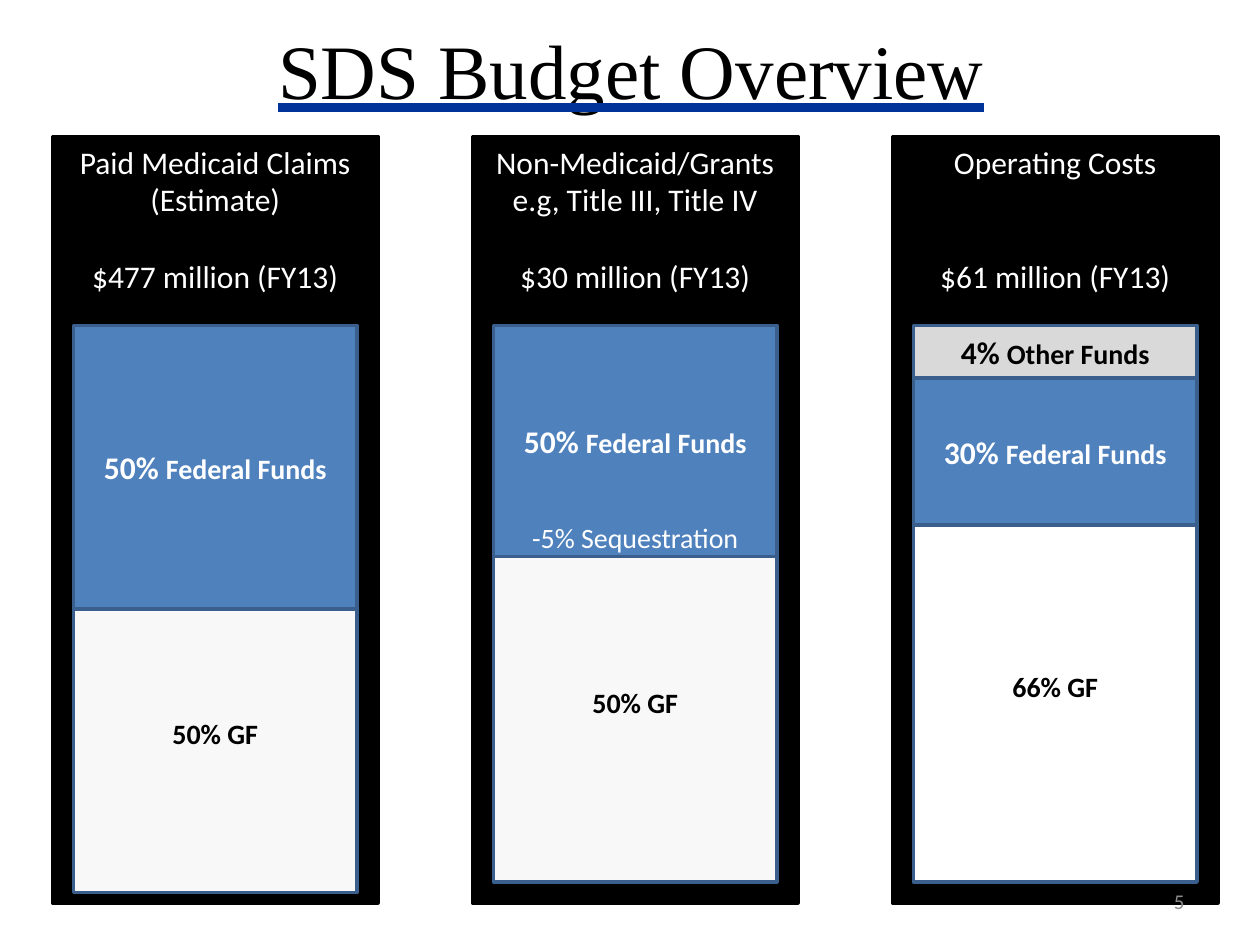
from lxml.etree import SubElement
from pptx import Presentation
from pptx.dml.color import RGBColor
from pptx.enum.shapes import MSO_SHAPE as Shape
from pptx.enum.text import MSO_ANCHOR as Anchor, MSO_UNDERLINE as Underline, PP_ALIGN as Align
from pptx.oxml.ns import qn
from pptx.util import Pt

BLACK, WHITE, GRAY = "000000", "FFFFFF", "D9D9D9"
BLUE, PALE, OUTLINE = "4F81BD", "F8F8F8", "3A5F8C"
COLUMN_LEFT, COLUMN_STEP, COLUMN_WIDTH = 30, 240, 186
COLUMN_TOP, COLUMN_HEIGHT = 78, 438
BAR_INSET, BAR_TOP = 12, 186
HEADER_LINE = 22

# Header lines, blank lines before the amount, amount, and
# (percentage, source, height, fill) for each segment from the top
COLUMNS = [
    (["Paid Medicaid Claims (Estimate)"], 1, "$477 million (FY13)",
     [("50%", "Federal Funds", 162, BLUE), ("50%", "GF", 162, PALE)]),
    (["Non-Medicaid/Grants", "e.g, Title III, Title IV"], 1, "$30 million (FY13)",
     [("50%", "Federal Funds", 132, BLUE), ("50%", "GF", 186, PALE)]),
    (["Operating Costs"], 2, "$61 million (FY13)",
     [("4%", "Other Funds", 30, GRAY), ("30%", "Federal Funds", 84, BLUE),
      ("66%", "GF", 204, WHITE)]),
]


def rgb(value):
    return RGBColor.from_string(value)


def set_font(font, size, color, bold=False, name="Calibri"):
    font.name, font.size, font.bold = name, Pt(size), bold
    font.color.rgb = rgb(color)


def add_title(slide, text):
    title = slide.shapes.title
    title.left, title.top, title.width, title.height = Pt(18), Pt(0), Pt(685.5), Pt(78)
    title.text_frame.vertical_anchor = Anchor.MIDDLE
    paragraph = title.text_frame.paragraphs[0]
    paragraph.alignment = Align.CENTER
    run = paragraph.add_run()
    run.text = text
    set_font(run.font, 44, BLACK, name="Times New Roman")
    run.font.underline = Underline.HEAVY_LINE
    # Blue underline, placed before the typeface as the schema requires
    properties = run.font._element
    underline_fill = SubElement(properties, qn("a:uFill"))
    solid_fill = SubElement(underline_fill, qn("a:solidFill"))
    SubElement(solid_fill, qn("a:srgbClr"), val="003399")
    properties.find(qn("a:latin")).addprevious(underline_fill)


def add_box(slide, left, top, width, height, fill, line):
    box = slide.shapes.add_shape(Shape.RECTANGLE, Pt(left), Pt(top), Pt(width), Pt(height))
    box.shadow.inherit = False
    box.fill.solid()
    box.fill.fore_color.rgb = rgb(fill)
    box.line.color.rgb = rgb(line)
    box.line.width = Pt(2)
    box.text_frame.word_wrap = True
    return box


def add_header(slide, left, lines, blank_lines, amount):
    box = add_box(slide, left, COLUMN_TOP, COLUMN_WIDTH, COLUMN_HEIGHT, BLACK, BLACK)
    frame = box.text_frame
    frame.vertical_anchor = Anchor.TOP
    frame.text = "\n".join(lines + [amount])
    for paragraph in frame.paragraphs:
        paragraph.alignment = Align.CENTER
        set_font(paragraph.font, 18, WHITE)
    frame.paragraphs[-1].space_before = Pt(blank_lines * HEADER_LINE)


def add_segment(slide, left, top, percentage, source, height, fill):
    box = add_box(slide, left, top, COLUMN_WIDTH - 2 * BAR_INSET, height, fill, OUTLINE)
    frame = box.text_frame
    frame.vertical_anchor = Anchor.MIDDLE
    paragraph = frame.paragraphs[0]
    paragraph.alignment = Align.CENTER
    general_fund = source == "GF"
    if general_fund:
        frame.margin_bottom = Pt(23)  # lifts the label above the middle
    percentage_size = 16 if general_fund else 18
    color = WHITE if fill == BLUE else BLACK
    for text, size in ((percentage + " ", percentage_size), (source, 16)):
        run = paragraph.add_run()
        run.text = text
        set_font(run.font, size, color, bold=True)


def add_label(slide, left, top, width, height, text, size, color, alignment, anchor):
    label = slide.shapes.add_textbox(Pt(left), Pt(top), Pt(width), Pt(height))
    frame = label.text_frame
    frame.word_wrap = True
    frame.vertical_anchor = anchor
    frame.text = text
    paragraph = frame.paragraphs[0]
    paragraph.alignment = alignment
    set_font(paragraph.font, size, color)


def main():
    presentation = Presentation()
    presentation.slide_width, presentation.slide_height = Pt(720), Pt(540)
    slide = presentation.slides.add_slide(presentation.slide_layouts[5])
    add_title(slide, "SDS Budget Overview")

    # Budget columns with their stacked funding sources
    for index, (lines, blank_lines, amount, segments) in enumerate(COLUMNS):
        left = COLUMN_LEFT + index * COLUMN_STEP
        add_header(slide, left, lines, blank_lines, amount)
        top = BAR_TOP
        for percentage, source, height, fill in segments:
            add_segment(slide, left + BAR_INSET, top, percentage, source, height, fill)
            top += height

    # Sequestration note and page number
    add_label(slide, 282, 294, 162, 26.5, "-5% Sequestration", 16, WHITE,
              Align.CENTER, Anchor.TOP)
    add_label(slide, 516, 500.5, 168, 28.75, "5", 12, "8C8C8C", Align.RIGHT, Anchor.MIDDLE)

    presentation.save("out.pptx")


if __name__ == "__main__":
    main()
